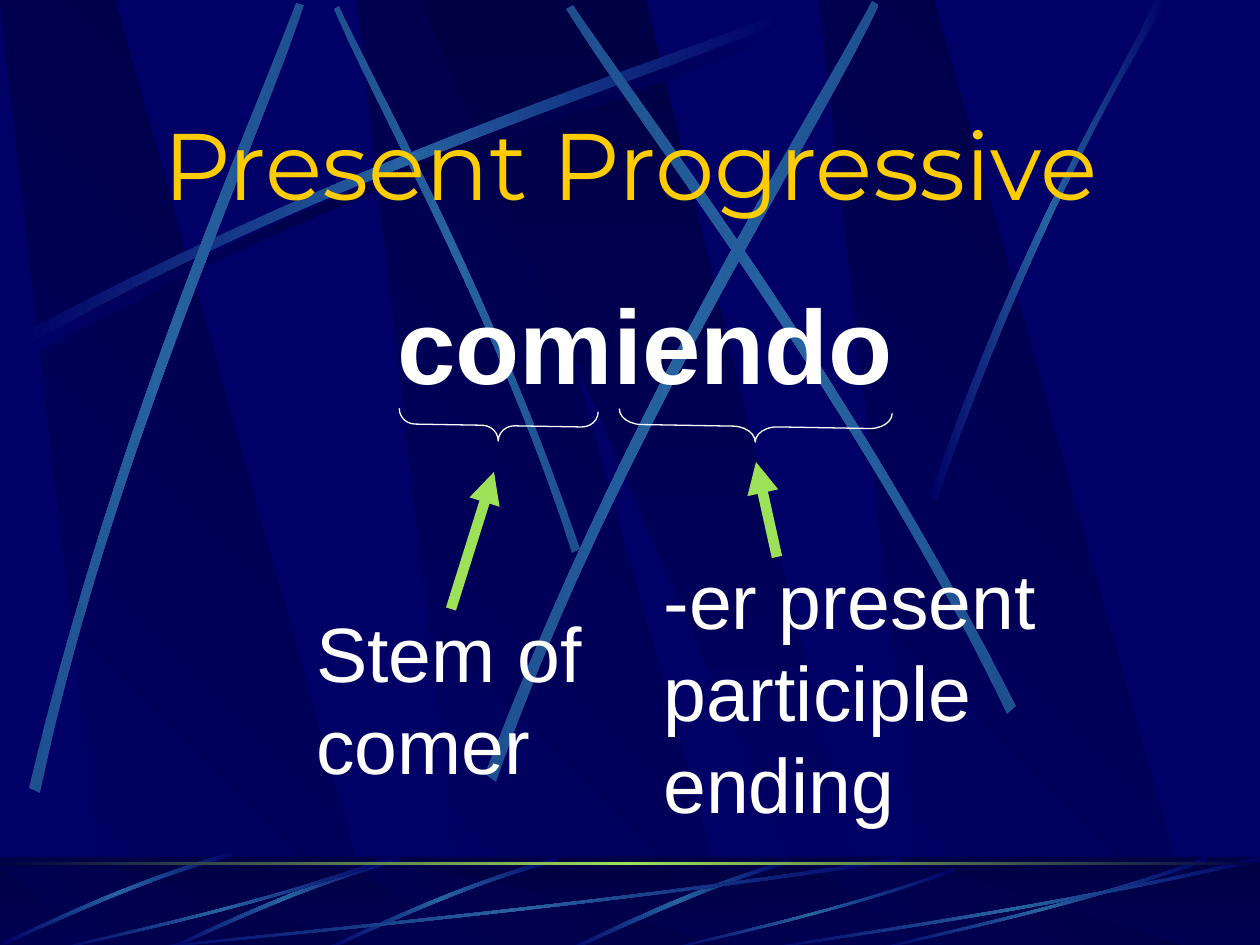
from lxml.etree import SubElement
from pptx import Presentation
from pptx.dml.color import RGBColor
from pptx.enum.shapes import MSO_CONNECTOR, MSO_SHAPE
from pptx.enum.text import MSO_ANCHOR, PP_ALIGN
from pptx.oxml.ns import qn
from pptx.util import Pt

PX = 914400 / 126
NAVY, DARK, STEEL, DIM = "000066", "000044", "2663A0", "1E5090"
GREEN, WHITE, GOLD = "9CE157", "FFFFFF", "FFCC00"
color = RGBColor.from_string

deck = Presentation()
deck.slide_width, deck.slide_height = round(1260 * PX), round(945 * PX)
slide = deck.slides.add_slide(deck.slide_layouts[5])
shapes = slide.shapes
title = shapes.title
slide.background.fill.solid()
slide.background.fill.fore_color.rgb = color(NAVY)


def paint(shape, angle, stops):
    shape.shadow.inherit = False
    shape.line.fill.background()
    shape.fill.gradient()
    shape.fill.gradient_angle = angle
    stop_list = shape._element.spPr.find(qn("a:gradFill")).find(qn("a:gsLst"))
    for old in list(stop_list):
        stop_list.remove(old)
    for i, value in enumerate(stops):
        position = str(100000 * i // (len(stops) - 1))
        stop = SubElement(stop_list, qn("a:gs"), pos=position)
        SubElement(stop, qn("a:srgbClr"), val=value)


def outline(points):
    scaled = [(x * PX, y * PX) for x, y in points]
    builder = shapes.build_freeform(*scaled[0], scale=1.0)
    builder.add_line_segments(scaled[1:], close=True)
    return builder.convert_to_shape()


rising = [(18, 336), (350, 158), (653, 64), (781, 13),
          (785, 20), (658, 77), (312, 180), (21, 349)]
fading, bright = [NAVY, STEEL, NAVY], [DIM, STEEL, DIM]
upper_streaks = [
    ([(x + 8, y + 10) for x, y in rising], [NAVY, DARK, NAVY]),
    ([(580, 549), (493, 295), (381, 97), (339, 6),
      (334, 9), (372, 100), (501, 325), (572, 553)], bright),
    (rising, fading),
    ([(29, 788), (117, 421), (248, 132), (296, 3),
      (304, 5), (261, 137), (108, 464), (40, 793)], bright),
    ([(485, 774), (627, 403), (804, 129), (872, 1),
      (879, 5), (818, 136), (612, 447), (496, 782)], bright),
    ([(1016, 706), (844, 369), (650, 120), (573, 5),
      (566, 9), (639, 127), (863, 410), (1007, 714)], bright),
    ([(930, 496), (1026, 218), (1119, 83), (1155, 0),
      (1168, 0), (1053, 183), (969, 406), (937, 500)], fading),
]

short = [(557, 857), (447, 888), (362, 932), (323, 949),
         (324, 951), (363, 936), (460, 886), (559, 861)]
long = [(903, 861), (566, 911), (260, 937), (130, 951),
        (126, 950), (255, 934), (605, 905), (900, 857)]
floor_streaks = [([(790, 859), (677, 893), (601, 935), (564, 950),
                   (571, 951), (617, 930), (719, 882), (791, 863)], fading)]
for dx, dy in [(0, 0), (-158, 0), (-322, -6)]:
    floor_streaks.append(([(x + dx, y + dy) for x, y in short], fading))
for left, top, width in [(126, 857, 777), (53, 857, 336), (664, 868, 291),
                         (872, 857, 336), (756, 857, 504)]:
    stretched = [(left + (x - 126) * width / 777,
                  951 - (951 - y) * (951 - top) / 94) for x, y in long]
    floor_streaks.append((stretched, fading))

for top, bottom, streaks in [(0, 947, upper_streaks), (867, 951, floor_streaks)]:
    is_floor = streaks is floor_streaks
    if is_floor:
        floor = shapes.add_shape(MSO_SHAPE.RECTANGLE, 0, round(857 * PX),
                                 deck.slide_width, round(94 * PX))
        paint(floor, 270, [DARK, NAVY])
    for left in (357, 0, 819):
        panel = outline([(left + 108, bottom), (left + 381, bottom),
                         (left + 115, top), (left, top)])
        paint(panel, 45, [NAVY, DARK])
    wedge = outline([(420, top), (829, bottom), (874, bottom), (646, top)])
    paint(wedge, 270, [DARK, NAVY])
    if is_floor:
        veil = shapes.add_shape(MSO_SHAPE.RECTANGLE, 0, round(857 * PX),
                                deck.slide_width, round(94 * PX))
        veil.shadow.inherit = False
        veil.line.fill.background()
        veil.fill.solid()
        veil.fill.fore_color.rgb = color(DARK)
        veil_color = veil._element.spPr.find(qn("a:solidFill"))[0]
        SubElement(veil_color, qn("a:alpha"), val="50000")
    for controls, stops in streaks:
        streak = outline(controls)
        paint(streak, 0, stops)
        segments = list(streak._element.spPr.iter(qn("a:lnTo")))
        for trio in (segments[:3], segments[4:7]):
            curve = SubElement(trio[0].getparent(), qn("a:cubicBezTo"))
            trio[0].addprevious(curve)
            for segment in trio:
                curve.append(segment[0])
                segment.getparent().remove(segment)

horizon = shapes.add_shape(MSO_SHAPE.RECTANGLE, 0, round(862 * PX),
                           deck.slide_width, round(3 * PX))
paint(horizon, 0, [DARK, GREEN, DARK])

backdrop = [shape._element for shape in shapes if shape.shape_id != title.shape_id]
for number, element in enumerate(backdrop, 100):
    element.nvSpPr.cNvPr.set("id", str(number))
    deck.slide_master.shapes._spTree.append(element)

title.left, title.top, title.width, title.height = [
    round(v * PX) for v in (95, 90, 1071, 146)]
title.text_frame.text = "Present Progressive"
title.text_frame.vertical_anchor = MSO_ANCHOR.MIDDLE
heading = title.text_frame.paragraphs[0]
heading.alignment = PP_ALIGN.CENTER
heading.runs[0].font.size = Pt(54)
heading.runs[0].font.name = "Montserrat"
heading.runs[0].font.color.rgb = color(GOLD)

for text, box, size, bold in [
    ("comiendo", (385, 273, 530, 133), 60, True),
    ("Stem of\ncomer", (304, 599, 300, 198), 44, False),
    ("-er present\nparticiple\nending", (651, 546, 410, 290), 44, False),
]:
    label = shapes.add_textbox(*[round(v * PX) for v in box]).text_frame
    label.word_wrap = True
    label.text = text
    for paragraph in label.paragraphs:
        for run in paragraph.runs:
            run.font.size = Pt(size)
            run.font.name = "Arial"
            run.font.bold = bold
            run.font.color.rgb = color(WHITE)

for box, curl in [((483, 326, 31, 199), 0.52), ((740, 290, 31, 273), 0.72)]:
    brace = shapes.add_shape(MSO_SHAPE.LEFT_BRACE, *[round(v * PX) for v in box])
    brace.rotation = 271
    brace.adjustments[0] = curl
    brace.shadow.inherit = False
    brace.fill.background()
    brace.line.color.rgb = color(WHITE)
    brace.line.width = Pt(0.75)

for ends in [(451, 609, 494, 472), (777, 557, 756, 462)]:
    arrow = shapes.add_connector(MSO_CONNECTOR.STRAIGHT, *[round(v * PX) for v in ends])
    arrow.line.color.rgb = color(GREEN)
    arrow.line.width = Pt(6)
    SubElement(arrow.line._get_or_add_ln(), qn("a:tailEnd"), type="triangle")
    SubElement(arrow._element.spPr, qn("a:effectLst"))

deck.save("out.pptx")
